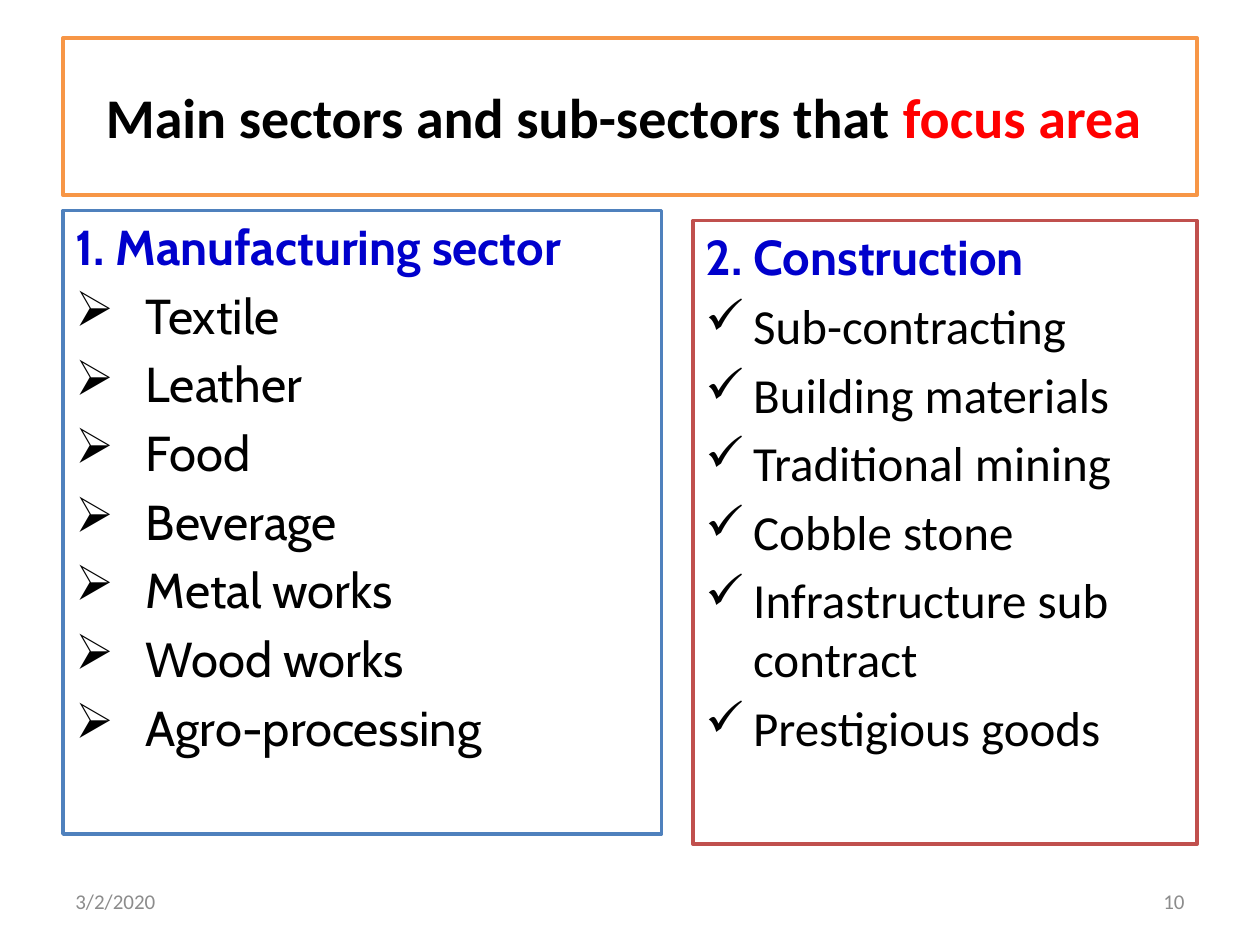
from pptx import Presentation
from pptx.dml.color import RGBColor
from pptx.enum.shapes import MSO_SHAPE as SHAPE
from pptx.enum.text import MSO_ANCHOR as ANCHOR, PP_ALIGN as ALIGN
from pptx.oxml.ns import qn
from pptx.util import Inches, Pt
from lxml.etree import SubElement

COLORS = {
    "white": "FFFFFF", "black": "000000", "red": "FF0000", "heading": "0000CC",
    "orange": "F79646", "blue": "4F81BD", "brick": "C0504D", "gray": "8C8C8C",
}
MARGIN, WIDTH = 0.5, 9

MANUFACTURING = ["Textile", "Leather", "Food", "Beverage", "Metal works",
                 "Wood works", "Agro-processing"]
CONSTRUCTION = ["Sub-contracting", "Building materials", "Traditional mining",
                "Cobble stone", "Infrastructure sub contract", "Prestigious goods"]


def color(name):
    return RGBColor.from_string(COLORS[name])


def add_run(p, text, size=28, font="Calibri", fill="black", bold=False):
    r = p.add_run()
    r.text = text
    r.font.size, r.font.name, r.font.bold = Pt(size), font, bold
    r.font.color.rgb = color(fill)


def set_indent(p, indent, bullet=None):
    """Give a list line its hanging indent, spacing and bullet."""
    p.alignment = ALIGN.LEFT
    p.space_before = Pt(5.6)
    pPr = p._p.get_or_add_pPr()
    pPr.set("marL", str(Inches(indent)))
    pPr.set("indent", str(-Inches(indent)))
    if bullet:
        SubElement(pPr, qn("a:buChar")).set("char", bullet)


def add_box(s, x, y, w, h, line, anchor=ANCHOR.TOP):
    """Add a white box with a coloured outline; return its text frame."""
    sp = s.shapes.add_shape(SHAPE.RECTANGLE, Inches(x), Inches(y), Inches(w), Inches(h))
    sp.shadow.inherit = False
    sp.fill.solid()
    sp.fill.fore_color.rgb = color("white")
    sp.line.color.rgb = color(line)
    sp.line.width = Pt(2)
    tf = sp.text_frame
    tf.word_wrap = True
    tf.vertical_anchor = anchor
    return tf


def add_sector(s, x, y, w, line, heading, items, bullet, indent, font):
    tf = add_box(s, x, y, w, 4.95, line)
    p = tf.paragraphs[0]
    set_indent(p, 0.38)
    add_run(p, heading, font="Cabin", fill="heading", bold=True)
    for item in items:
        p = tf.add_paragraph()
        set_indent(p, indent, bullet)
        add_run(p, item, font=font)


def add_footer(s, x, text, align):
    tf = s.shapes.add_textbox(Inches(x), Inches(6.95), Inches(2.33), Inches(0.4)).text_frame
    tf.word_wrap = True
    tf.vertical_anchor = ANCHOR.MIDDLE
    p = tf.paragraphs[0]
    p.alignment = align
    add_run(p, text, size=12, fill="gray")


def main():
    prs = Presentation()
    prs.slide_width, prs.slide_height = Inches(10), Inches(7.5)
    s = prs.slides.add_slide(prs.slide_layouts[6])

    # Title
    p = add_box(s, MARGIN, 0.3, WIDTH, 1.25, "orange", ANCHOR.MIDDLE).paragraphs[0]
    p.alignment = ALIGN.CENTER
    add_run(p, "Main sectors and sub-sectors that ", size=32, bold=True)
    add_run(p, "focus area ", size=32, fill="red", bold=True)

    # Sector lists
    add_sector(s, MARGIN, 1.67, 4.75, "blue", "1. Manufacturing sector",
               MANUFACTURING, "➢", 0.56, "Cabin")
    add_sector(s, 5.5, 1.75, 4, "brick", "2. Construction",
               CONSTRUCTION, "✓", 0.38, "Calibri")

    # Date and slide number
    add_footer(s, MARGIN, "3/2/2020", ALIGN.LEFT)
    add_footer(s, MARGIN + WIDTH - 2.33, "10", ALIGN.RIGHT)

    prs.save("out.pptx")


if __name__ == "__main__":
    main()
